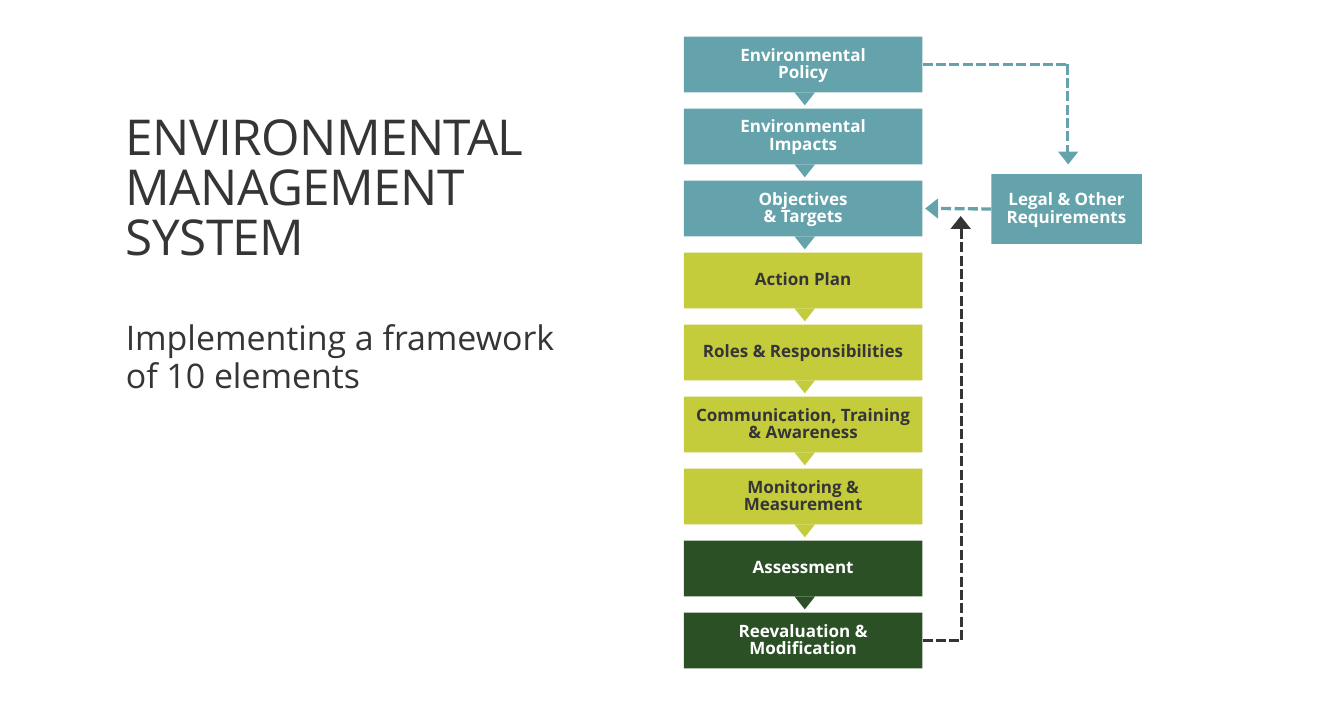
from dataclasses import dataclass

from lxml import etree
from pptx import Presentation
from pptx.dml.color import RGBColor
from pptx.enum.dml import MSO_LINE
from pptx.enum.shapes import MSO_CONNECTOR, MSO_SHAPE
from pptx.enum.text import MSO_ANCHOR, MSO_AUTO_SIZE, PP_ALIGN
from pptx.oxml.ns import qn
from pptx.util import Inches, Pt

STRAIGHT = MSO_CONNECTOR.STRAIGHT
RECTANGLE = MSO_SHAPE.RECTANGLE
TRIANGLE = MSO_SHAPE.ISOSCELES_TRIANGLE
SYS_DASH = MSO_LINE.SQUARE_DOT
MIDDLE, TOP = MSO_ANCHOR.MIDDLE, MSO_ANCHOR.TOP
CENTER, LEFT = PP_ALIGN.CENTER, PP_ALIGN.LEFT
NO_AUTOFIT = MSO_AUTO_SIZE.NONE
LEFT_SIDE, RIGHT_SIDE = 1, 3


@dataclass(frozen=True)
class Theme:
    font: str = "Open Sans"
    teal: RGBColor = RGBColor(0x64, 0xA3, 0xAC)
    lime: RGBColor = RGBColor(0xC4, 0xCC, 0x3C)
    forest: RGBColor = RGBColor(0x2B, 0x50, 0x26)
    dark: RGBColor = RGBColor(0x35, 0x35, 0x37)
    white: RGBColor = RGBColor(0xFF, 0xFF, 0xFF)
    title_size: float = 33.1
    subtitle_size: float = 22.7
    step_size: float = 11.4
    dash_width: float = 2.25


THEME = Theme()

STEPS = [
    ("Environmental\vPolicy", THEME.teal),
    ("Environmental\vImpacts", THEME.teal),
    ("Objectives\v& Targets", THEME.teal),
    ("Action Plan", THEME.lime),
    ("Roles & Responsibilities", THEME.lime),
    ("Communication, Training\v& Awareness", THEME.lime),
    ("Monitoring & Measurement", THEME.lime),
    ("Assessment", THEME.forest),
    ("Reevaluation & Modification", THEME.forest),
]
STEP_LEFT, STEP_TOP, STEP_WIDTH, STEP_HEIGHT = 6.36, 0.34, 2.22, 0.52
STEP_PITCH = 0.67
POINTER_WIDTH, POINTER_HEIGHT = 0.19, 0.12
LEGAL_TURN, FEEDBACK_TURN = 9.93, 8.94
POLICY_Y, TARGETS_Y, REEVALUATION_Y = 0.6, 1.94, 5.96


def style_paragraph(paragraph, size, color, spacing, align, bold=False):
    paragraph.alignment = align
    paragraph.line_spacing = spacing
    paragraph.space_before = Pt(0)
    font = paragraph.font
    font.name = THEME.font
    font.size = Pt(size)
    font.bold = bold
    font.color.rgb = color


def fill_placeholder(placeholder, text, box, size, spacing):
    placeholder.left, placeholder.top, placeholder.width, placeholder.height = map(Inches, box)
    frame = placeholder.text_frame
    frame.text = text
    frame.word_wrap = True
    frame.auto_size = NO_AUTOFIT
    frame.vertical_anchor = TOP
    paragraph = frame.paragraphs[0]
    properties = paragraph._p.get_or_add_pPr()
    properties.set("marL", "0")
    properties.set("indent", "0")
    etree.SubElement(properties, qn("a:buNone"))
    style_paragraph(paragraph, size, THEME.dark, spacing, LEFT)
    return paragraph


def add_filled(slide, kind, box, color):
    shape = slide.shapes.add_shape(kind, *map(Inches, box))
    shape.shadow.inherit = False
    shape.fill.solid()
    shape.fill.fore_color.rgb = color
    shape.line.fill.background()
    return shape


def add_step(slide, text, box, color):
    step = add_filled(slide, RECTANGLE, box, color)
    frame = step.text_frame
    frame.text = text
    frame.word_wrap = True
    frame.vertical_anchor = MIDDLE
    frame.margin_left = frame.margin_right = Inches(0.09)
    frame.margin_top = frame.margin_bottom = Inches(0)
    text_color = THEME.dark if color == THEME.lime else THEME.white
    style_paragraph(frame.paragraphs[0], THEME.step_size, text_color, 0.86, CENTER, True)
    return step


def add_pointer(slide, left, top, color, rotation):
    pointer = add_filled(slide, TRIANGLE, (left, top, POINTER_WIDTH, POINTER_HEIGHT), color)
    pointer.rotation = rotation


def add_dashes(slide, start, end, color, source=None, side=None):
    dashes = slide.shapes.add_connector(STRAIGHT, *map(Inches, (*start, *end)))
    dashes.line.color.rgb = color
    dashes.line.width = Pt(THEME.dash_width)
    dashes.line.dash_style = SYS_DASH
    etree.SubElement(dashes._element.spPr, qn("a:effectLst"))
    if source is not None:
        dashes.begin_connect(source, side)


def add_heading(slide):
    title = fill_placeholder(slide.shapes.title, "ENVIRONMENTAL\vMANAGEMENT SYSTEM",
                             (1.07, 1.03, 4.37, 1.8), THEME.title_size, 0.84)
    for run in title.runs:
        run._r.get_or_add_rPr().set("spc", "-40")
    fill_placeholder(slide.placeholders[1], "Implementing a framework of 10 elements",
                     (1.07, 2.93, 4.37, 2.97), THEME.subtitle_size, 0.93)


def add_step_column(slide):
    steps = []
    for index, (text, color) in enumerate(STEPS):
        top = STEP_TOP + index * STEP_PITCH
        steps.append(add_step(slide, text, (STEP_LEFT, top, STEP_WIDTH, STEP_HEIGHT), color))
        if index < len(STEPS) - 1:
            add_pointer(slide, 7.39, top + STEP_HEIGHT, color, 180)
    return steps


def add_legal_branch(slide, policy):
    legal = add_step(slide, "Legal & Other Requirements", (9.22, 1.62, 1.4, 0.65), THEME.teal)
    add_dashes(slide, (8.58, POLICY_Y), (LEGAL_TURN, POLICY_Y), THEME.teal, policy, RIGHT_SIDE)
    add_dashes(slide, (LEGAL_TURN, POLICY_Y), (LEGAL_TURN, 1.41), THEME.teal)
    add_pointer(slide, 9.84, 1.41, THEME.teal, 180)
    add_dashes(slide, (9.22, TARGETS_Y), (8.72, TARGETS_Y), THEME.teal, legal, LEFT_SIDE)
    add_pointer(slide, 8.57, 1.88, THEME.teal, 270)


def add_feedback_loop(slide, reevaluation):
    add_dashes(slide, (8.58, REEVALUATION_Y), (FEEDBACK_TURN, REEVALUATION_Y),
               THEME.dark, reevaluation, RIGHT_SIDE)
    add_dashes(slide, (FEEDBACK_TURN, 2.13), (FEEDBACK_TURN, REEVALUATION_Y), THEME.dark)
    add_pointer(slide, 8.84, 2.01, THEME.dark, 0)


def main():
    presentation = Presentation()
    presentation.slide_width = Inches(12.5)
    presentation.slide_height = Inches(6.56)
    slide = presentation.slides.add_slide(presentation.slide_layouts[1])
    add_heading(slide)
    steps = add_step_column(slide)
    add_legal_branch(slide, steps[0])
    add_feedback_loop(slide, steps[-1])
    presentation.save("out.pptx")


if __name__ == "__main__":
    main()
